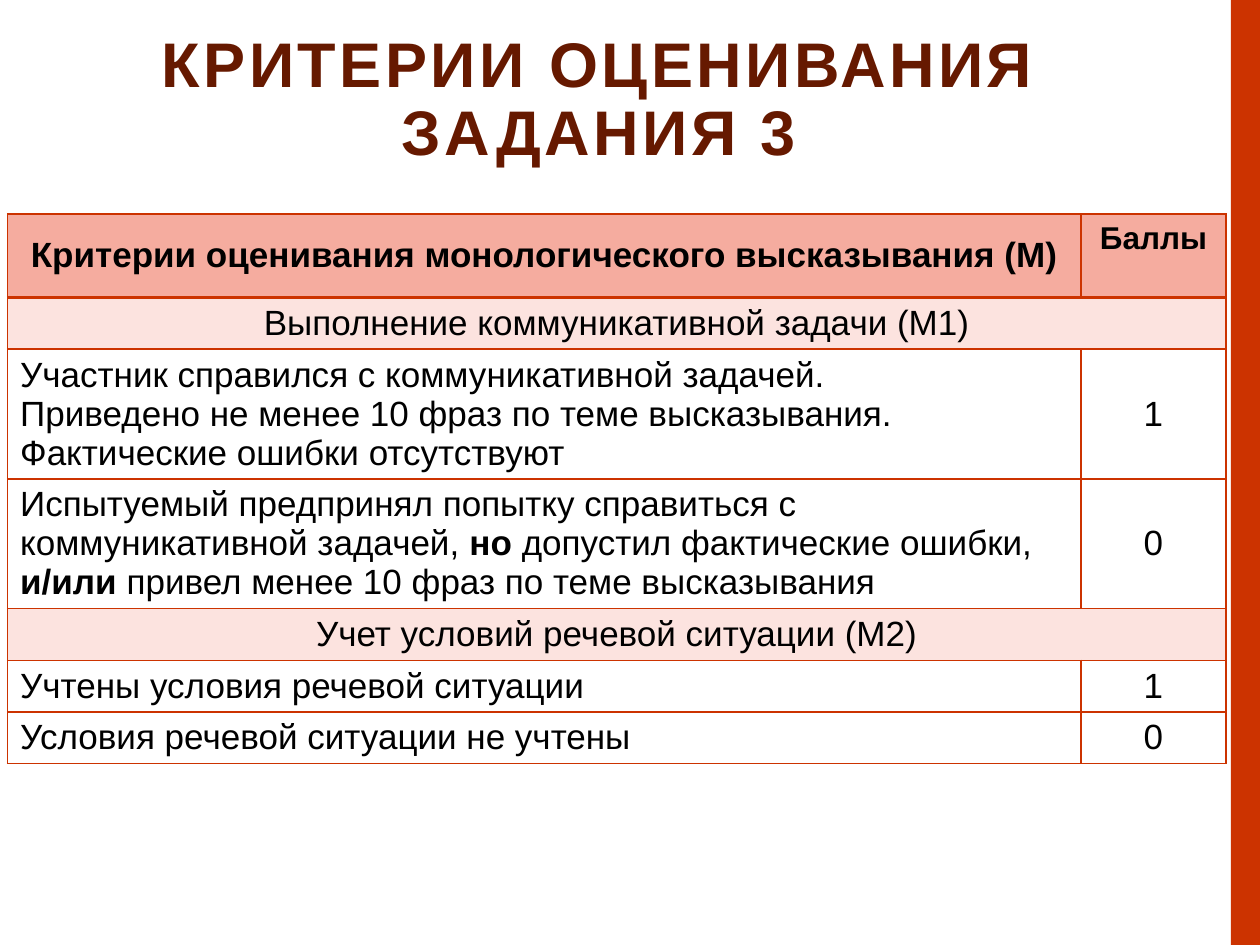
from lxml import etree
from pptx import Presentation
from pptx import util as u
from pptx.dml.color import RGBColor
from pptx.enum import shapes, text
from pptx.oxml.ns import qn

COLOURS = {"accent": "CC3300", "title": "661900", "header": "F5AC9F",
           "section": "FCE3DF", "plain": "FFFFFF", "ink": "000000"}
FONT = "Arial"
WIDTH, HEIGHT = u.Inches(10), u.Inches(7.5)
COLUMNS = (8.52, 1.15)
LINE, PADDING = 0.31, 0.1  # height of a text line and of a cell's margins

# Each criterion: paragraphs of (words, bold) spans, then its score.
SECTIONS = [
    ("Выполнение коммуникативной задачи (М1)", [
        ([[("Участник справился с коммуникативной задачей.", False)],
          [("Приведено не менее 10 фраз по теме высказывания.", False)],
          [("Фактические ошибки отсутствуют", False)]], "1", 3),
        ([[("Испытуемый предпринял попытку справиться с коммуникативной задачей, ", False),
           ("но ", True),
           ("допустил фактические ошибки,", False),
           (" и/или ", True),
           ("привел менее 10 фраз по теме высказывания", False)]], "0", 3),
    ]),
    ("Учет условий речевой ситуации (М2)", [
        ([[("Учтены условия речевой ситуации", False)]], "1", 1),
        ([[("Условия речевой ситуации не учтены", False)]], "0", 1),
    ]),
]


def colour(name):
    return RGBColor.from_string(COLOURS[name])


def write(frame, paragraphs, size, align, ink="ink"):
    """Fill a text frame with paragraphs of (words, bold) spans."""
    for index, spans in enumerate(paragraphs):
        para = frame.add_paragraph() if index else frame.paragraphs[0]
        para.alignment = align
        for words, bold in spans:
            span = para.add_run()
            span.text = words
            span.font.name, span.font.size, span.font.bold = FONT, u.Pt(size), bold
            span.font.color.rgb = colour(ink)


def set_borders(cell, bottom=1, top=1):
    properties = cell._tc.get_or_add_tcPr()
    for index, (side, width) in enumerate((("L", 1), ("R", 1), ("T", top), ("B", bottom))):
        line = etree.Element(qn(f"a:ln{side}"), w=str(u.Pt(width)))
        fill = etree.SubElement(line, qn("a:solidFill"))
        etree.SubElement(fill, qn("a:srgbClr"), val=COLOURS["accent"])
        properties.insert(index, line)


def fill_cell(cell, paragraphs, fill="plain", size=20, centred=True,
              anchor=text.MSO_ANCHOR.MIDDLE):
    cell.fill.solid()
    cell.fill.fore_color.rgb = colour(fill)
    cell.vertical_anchor = anchor
    cell.margin_left = cell.margin_right = u.Inches(0.1)
    cell.margin_top = cell.margin_bottom = u.Inches(PADDING / 2)
    write(cell.text_frame, paragraphs, size,
          text.PP_ALIGN.CENTER if centred else text.PP_ALIGN.LEFT)


def add_side_band(page, left, top, width, height):
    band = page.shapes.add_shape(shapes.MSO_SHAPE.RECTANGLE, left, top, width, height)
    band.shadow.inherit = False
    band.fill.solid()
    band.fill.fore_color.rgb = colour("accent")
    band.line.fill.background()


def add_title(page, left, top, width, height):
    box = page.shapes.add_textbox(left, top, width, height)
    frame = box.text_frame
    frame.word_wrap = True
    frame.vertical_anchor = text.MSO_ANCHOR.MIDDLE
    write(frame, [[("КРИТЕРИИ ОЦЕНИВАНИЯ ЗАДАНИЯ 3", True)]], 36,
          text.PP_ALIGN.CENTER, "title")
    para = frame.paragraphs[0]
    para.line_spacing = 0.9
    para.runs[0].font._element.set("spc", "200")


def add_criteria_table(page, left, top):
    """Lay out the header, then each section's heading and criteria."""
    heights = [0.66]
    for _, criteria in SECTIONS:
        heights += [LINE + PADDING] + [lines * LINE + PADDING for *_, lines in criteria]
    table = page.shapes.add_table(len(heights), len(COLUMNS), left, top,
                                  u.Inches(sum(COLUMNS)), u.Inches(sum(heights))).table
    for column, width in zip(table.columns, COLUMNS):
        column.width = u.Inches(width)
    for row, height in zip(table.rows, heights):
        row.height = u.Inches(height)

    fill_cell(table.cell(0, 0),
              [[("Критерии оценивания монологического высказывания (М)", True)]], "header")
    fill_cell(table.cell(0, 1), [[("Баллы", True)]], "header", 18,
              anchor=text.MSO_ANCHOR.TOP)
    row = 1
    for heading, criteria in SECTIONS:
        table.cell(row, 0).merge(table.cell(row, 1))
        fill_cell(table.cell(row, 0), [[(heading, False)]], "section")
        for row, (paragraphs, score, _) in enumerate(criteria, row + 1):
            fill_cell(table.cell(row, 0), paragraphs, centred=False)
            fill_cell(table.cell(row, 1), [[(score, False)]])
        row += 1
    for index in range(len(heights)):
        for cell in table.rows[index].cells:
            set_borders(cell, bottom=2 if index == 0 else 1, top=2 if index == 1 else 1)


def main():
    deck = Presentation()
    deck.slide_width, deck.slide_height = WIDTH, HEIGHT
    page = deck.slides.add_slide(deck.slide_layouts[6])
    band = u.Inches(0.23)
    add_side_band(page, WIDTH - band, 0, band, HEIGHT)
    add_criteria_table(page, u.Inches(0.06), u.Inches(1.7))
    add_title(page, u.Inches(0.03), u.Inches(0.21), u.Inches(9.45), u.Inches(1.18))
    deck.save("out.pptx")


if __name__ == "__main__":
    main()
